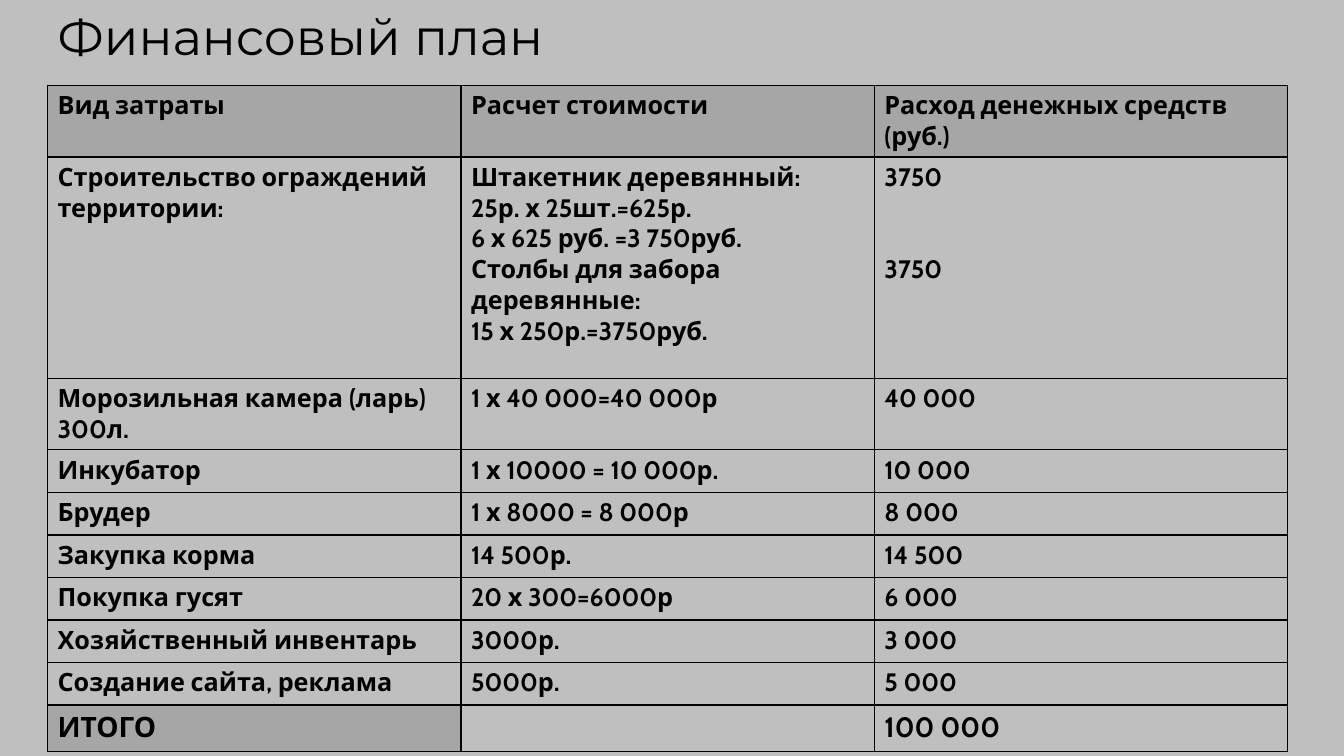
from lxml import etree
from pptx import Presentation
from pptx.dml.color import RGBColor
from pptx.enum.text import MSO_ANCHOR, MSO_AUTO_SIZE, PP_ALIGN
from pptx.oxml.ns import qn
from pptx.util import Pt

TITLE = "Финансовый план"
HEADER = ("Вид затраты", "Расчет стоимости", "Расход денежных средств (руб.)")
FENCE_COST = "\n".join((
    "Штакетник деревянный:",
    "25р. х 25шт.=625р.",
    "6 х 625 руб. =3 750руб.",
    "Столбы для забора деревянные:",
    "15 х 250р.=3750руб.",
))
EXPENSES = [
    ("Строительство ограждений территории:", FENCE_COST, "3750\n3750"),
    ("Морозильная камера (ларь) 300л.", "1 х 40 000=40 000р", "40 000"),
    ("Инкубатор", "1 х 10000 = 10 000р.", "10 000"),
    ("Брудер", "1 х 8000 = 8 000р", "8 000"),
    ("Закупка корма", "14 500р.", "14 500"),
    ("Покупка гусят", "20 х 300=6000р", "6 000"),
    ("Хозяйственный инвентарь", "3000р.", "3 000"),
    ("Создание сайта, реклама", "5000р.", "5 000"),
]
TOTAL = ("ИТОГО", "", "100 000")
ROWS = [HEADER, *EXPENSES, TOTAL]

BLACK = RGBColor(0x00, 0x00, 0x00)
LIGHT_GREY = RGBColor(0xBF, 0xBF, 0xBF)
DARK_GREY = RGBColor(0xA6, 0xA6, 0xA6)
TOP = MSO_ANCHOR.TOP
LEFT = PP_ALIGN.LEFT
NO_AUTOFIT = MSO_AUTO_SIZE.NONE

TABLE_LEFT, TABLE_TOP = 34, 61
COLUMN_WIDTH = 295.3
ROW_HEIGHTS = [50.4, 158, 50.4] + [30.4] * 6 + [33]
TWO_LINES = 44


def set_font(font, name, size, bold):
    font.name = name
    font.size = Pt(size)
    font.bold = bold
    font.color.rgb = BLACK


def add_borders(cell):
    properties = cell._tc.get_or_add_tcPr()
    for side in ("a:lnL", "a:lnR", "a:lnT", "a:lnB"):
        line = etree.SubElement(properties, qn(side), w=str(Pt(1)))
        fill = etree.SubElement(line, qn("a:solidFill"))
        etree.SubElement(fill, qn("a:srgbClr"), val=str(BLACK))


def add_title(page):
    title = page.shapes.title
    title.left, title.top = Pt(TABLE_LEFT), Pt(0)
    title.width, title.height = Pt(392), Pt(51)
    frame = title.text_frame
    frame.text = TITLE
    frame.word_wrap = False
    frame.auto_size = NO_AUTOFIT
    frame.vertical_anchor = TOP
    para = frame.paragraphs[0]
    para.alignment = LEFT
    set_font(para.runs[0].font, "Montserrat", 36, False)


def add_expense_table(page):
    table = page.shapes.add_table(
        len(ROWS), len(HEADER), Pt(TABLE_LEFT), Pt(TABLE_TOP),
        Pt(COLUMN_WIDTH * len(HEADER)), Pt(sum(ROW_HEIGHTS))).table
    table.first_row = False
    table.horz_banding = False
    for column in table.columns:
        column.width = Pt(COLUMN_WIDTH)
    for row, height in zip(table.rows, ROW_HEIGHTS):
        row.height = Pt(height)

    for row_index, texts in enumerate(ROWS):
        is_total = texts is TOTAL
        for column_index, text in enumerate(texts):
            cell = table.cell(row_index, column_index)
            add_borders(cell)
            is_dark = texts is HEADER or (is_total and column_index == 0)
            cell.fill.solid()
            cell.fill.fore_color.rgb = DARK_GREY if is_dark else LIGHT_GREY
            cell.text_frame.text = text
            for para in cell.text_frame.paragraphs:
                set_font(para.font, "Cabin", 20 if is_total else 18, True)
                for span in para.runs:
                    set_font(span.font, "Cabin", 20 if is_total else 18, True)
    # The post cost lines up with the fourth line of the calculation
    table.cell(1, 2).text_frame.paragraphs[1].space_before = Pt(TWO_LINES)


def main():
    deck = Presentation()
    deck.slide_width, deck.slide_height = Pt(960), Pt(540)
    page = deck.slides.add_slide(deck.slide_layouts[5])
    page.background.fill.solid()
    page.background.fill.fore_color.rgb = LIGHT_GREY
    add_title(page)
    add_expense_table(page)
    deck.save("out.pptx")


if __name__ == "__main__":
    main()
